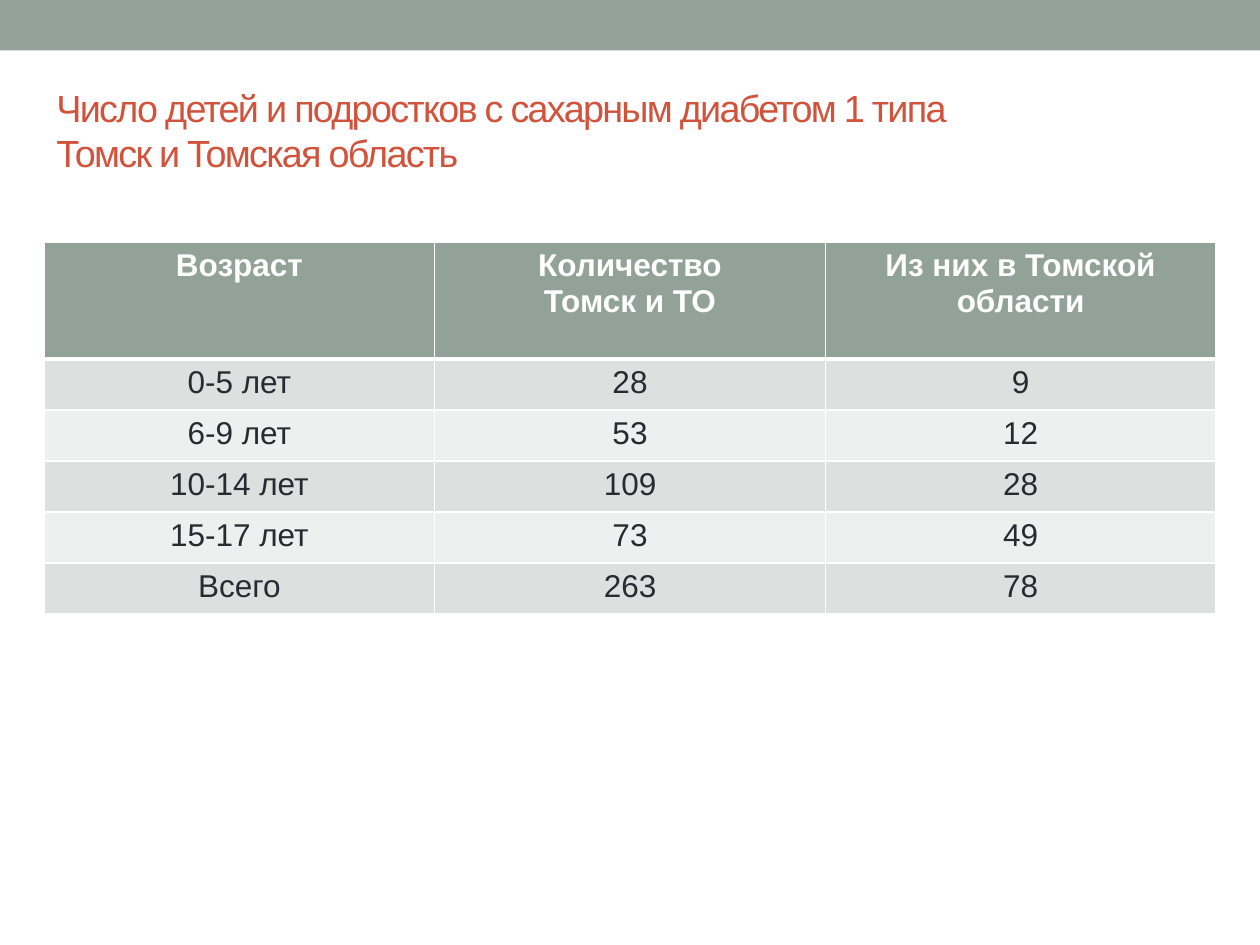
from lxml.etree import SubElement
from pptx import Presentation
from pptx.dml.color import RGBColor
from pptx.enum.shapes import MSO_SHAPE as Shape
from pptx.enum.text import MSO_ANCHOR as Anchor, PP_ALIGN as Align
from pptx.oxml.ns import qn
from pptx.util import Inches, Pt

# Content
TITLE = "Число детей и подростков с сахарным диабетом 1 типа\vТомск и Томская область"
ROWS = [
    ("Возраст", "Количество\nТомск и ТО", "Из них в Томской области"),
    ("0-5 лет", "28", "9"),
    ("6-9 лет", "53", "12"),
    ("10-14 лет", "109", "28"),
    ("15-17 лет", "73", "49"),
    ("Всего", "263", "78"),
]
SAGE, RED, DARK, WHITE = "93A299", "D2533C", "292934", "FFFFFF"
BANDS = ("EEF0EF", "DCE0DE")
LEFT, WIDTH = 0.35, 9.3
HEADER_HEIGHT, ROW_HEIGHT = 0.93, 0.405


def set_fill(item, color):
    item.fill.solid()
    item.fill.fore_color.rgb = RGBColor.from_string(color)


def style_text(paragraph, size, color, bold=False):
    for run in paragraph.runs:
        run.font.name, run.font.size, run.font.bold = "Arial", Pt(size), bold
        run.font.color.rgb = RGBColor.from_string(color)


def set_borders(cell, bottom):
    properties = cell._tc.get_or_add_tcPr()
    widths = {"lnL": 1, "lnR": 1, "lnT": 1, "lnB": bottom}
    for index, (side, width) in enumerate(widths.items()):
        line = SubElement(properties, qn(f"a:{side}"), w=str(Pt(width)))
        fill = SubElement(line, qn("a:solidFill"))
        SubElement(fill, qn("a:srgbClr"), val=WHITE)
        properties.insert(index, line)  # borders come before the fill


presentation = Presentation()
presentation.slide_width, presentation.slide_height = Inches(10), Inches(7.5)
slide = presentation.slides.add_slide(presentation.slide_layouts[6])

# Top band
band = slide.shapes.add_shape(Shape.RECTANGLE, 0, 0, Inches(10), Inches(0.4))
band.shadow.inherit = False
set_fill(band, SAGE)
band.line.fill.background()

# Title
title = slide.shapes.add_textbox(Inches(LEFT), Inches(0.75), Inches(WIDTH), Inches(0.57))
frame = title.text_frame
frame.word_wrap = True
frame.vertical_anchor = Anchor.MIDDLE
frame.text = TITLE
paragraph = frame.paragraphs[0]
paragraph.line_spacing = Pt(25.7)
style_text(paragraph, 21.6, RED)
for run in paragraph.runs:
    run.font._element.set("spc", "-100")

# Table
height = HEADER_HEIGHT + ROW_HEIGHT * (len(ROWS) - 1)
table = slide.shapes.add_table(len(ROWS), len(ROWS[0]), Inches(LEFT), Inches(1.92),
                               Inches(WIDTH), Inches(height)).table
for row_index, texts in enumerate(ROWS):
    header = row_index == 0
    table.rows[row_index].height = Inches(HEADER_HEIGHT if header else ROW_HEIGHT)
    for column_index, text in enumerate(texts):
        cell = table.cell(row_index, column_index)
        cell.text_frame.text = text
        set_fill(cell, SAGE if header else BANDS[row_index % 2])
        set_borders(cell, bottom=3 if header else 1)
        for paragraph in cell.text_frame.paragraphs:
            paragraph.alignment = Align.CENTER
            style_text(paragraph, 18, WHITE if header else DARK, bold=header)

presentation.save("out.pptx")
